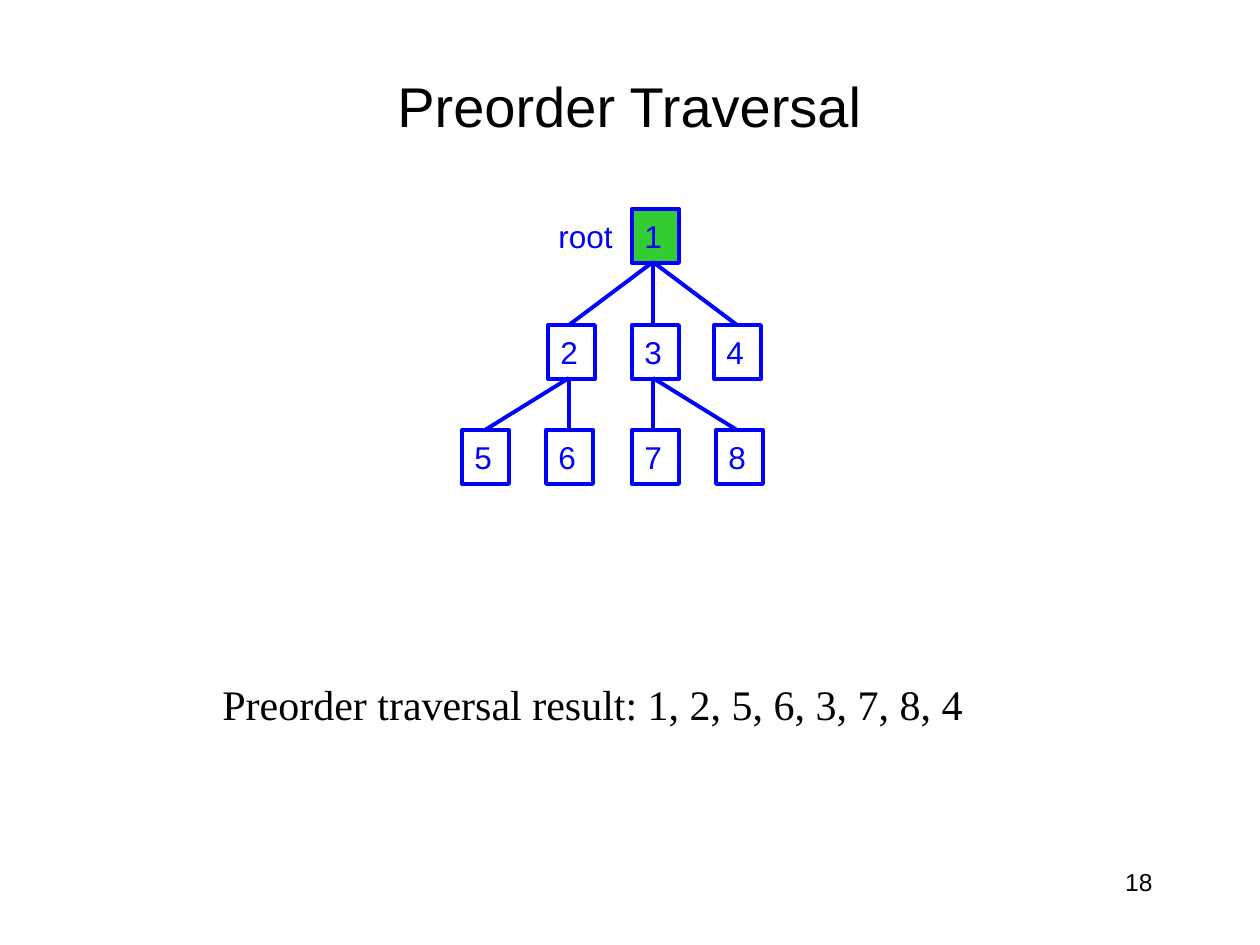
from dataclasses import dataclass

from lxml import etree
from pptx import Presentation
from pptx.dml.color import RGBColor
from pptx.enum.shapes import MSO_CONNECTOR, MSO_SHAPE
from pptx.enum.text import MSO_ANCHOR, MSO_AUTO_SIZE, PP_ALIGN
from pptx.oxml.ns import qn
from pptx.util import Emu, Pt

LEFT, CENTER, RIGHT = PP_ALIGN.LEFT, PP_ALIGN.CENTER, PP_ALIGN.RIGHT
TOP, MIDDLE = MSO_ANCHOR.TOP, MSO_ANCHOR.MIDDLE
RECT, STRAIGHT = MSO_SHAPE.RECTANGLE, MSO_CONNECTOR.STRAIGHT
NO_AUTOFIT = MSO_AUTO_SIZE.NONE

PX_PER_INCH = 126
BLACK, BLUE, GREEN = "000000", "0000FF", "33CC33"
NODE_W, NODE_H = 47, 54
EDGE_DROP = 53  # from a node's top to where its child edges start
LINE_WIDTH = Pt(2.25)
LEVELS = [209, 325, 430]
COLUMNS = [485, 569, 653, 737]


@dataclass
class Node:
    label: str
    left: int
    level: int
    column: int
    parent: str = ""
    fill: str = ""


NODES = [
    Node("1", 632, 0, 2, fill=GREEN),
    Node("2", 548, 1, 1, "1"),
    Node("3", 632, 1, 2, "1"),
    Node("4", 714, 1, 3, "1"),
    Node("5", 462, 2, 0, "2"),
    Node("6", 546, 2, 1, "2"),
    Node("7", 632, 2, 2, "3"),
    Node("8", 716, 2, 3, "3"),
]


def px(n: int) -> Emu:
    return Emu(round(n * 914400 / PX_PER_INCH))


def rgb(color: str) -> RGBColor:
    return RGBColor.from_string(color)


def write(s, text: str, size: int, color: str = BLACK, font: str = "Arial",
          align=LEFT, anchor=TOP, wrap: bool = True) -> None:
    tf = s.text_frame
    tf.auto_size = NO_AUTOFIT
    tf.word_wrap = wrap
    tf.vertical_anchor = anchor
    p = tf.paragraphs[0]
    p.alignment = align
    r = p.add_run()
    r.text = text
    r.font.size = Pt(size)
    r.font.name = font
    r.font.color.rgb = rgb(color)


def add_label(slide, x: int, y: int, w: int, h: int, text: str, size: int, **style) -> None:
    write(slide.shapes.add_textbox(px(x), px(y), px(w), px(h)), text, size, **style)


def add_node(slide, node: Node) -> None:
    s = slide.shapes.add_shape(RECT, px(node.left), px(LEVELS[node.level]),
                               px(NODE_W), px(NODE_H))
    s.shadow.inherit = False
    if node.fill:
        s.fill.solid()
        s.fill.fore_color.rgb = rgb(node.fill)
    else:
        s.fill.background()
    s.line.color.rgb = rgb(BLUE)
    s.line.width = LINE_WIDTH
    write(s, node.label, 18, BLUE, anchor=MIDDLE, wrap=False)


def add_edge(slide, parent: Node, child: Node) -> None:
    line = slide.shapes.add_connector(
        STRAIGHT,
        px(COLUMNS[parent.column]), px(LEVELS[parent.level] + EDGE_DROP),
        px(COLUMNS[child.column]), px(LEVELS[child.level]))
    line.line.color.rgb = rgb(BLUE)
    line.line.width = LINE_WIDTH
    etree.SubElement(line.element.spPr, qn("a:effectLst"))


def main() -> None:
    prs = Presentation()
    prs.slide_width, prs.slide_height = px(1260), px(945)
    slide = prs.slides.add_slide(prs.slide_layouts[5])

    title = slide.shapes.title
    title.left, title.top, title.width, title.height = px(94), px(53), px(1071), px(105)
    write(title, "Preorder Traversal", 32, align=CENTER, anchor=MIDDLE)

    for node in NODES:
        add_node(slide, node)
    by_label = {node.label: node for node in NODES}
    for node in NODES:
        if node.parent:
            add_edge(slide, by_label[node.parent], node)

    add_label(slide, 546, 211, 79, 50, "root", 18, color=BLUE, wrap=False)
    add_label(slide, 210, 672, 861, 63,
              "Preorder traversal result: 1, 2, 5, 6, 3, 7, 8, 4", 24,
              font="Times New Roman")
    add_label(slide, 903, 861, 262, 63, "18", 14, align=RIGHT)

    prs.save("out.pptx")


if __name__ == "__main__":
    main()
